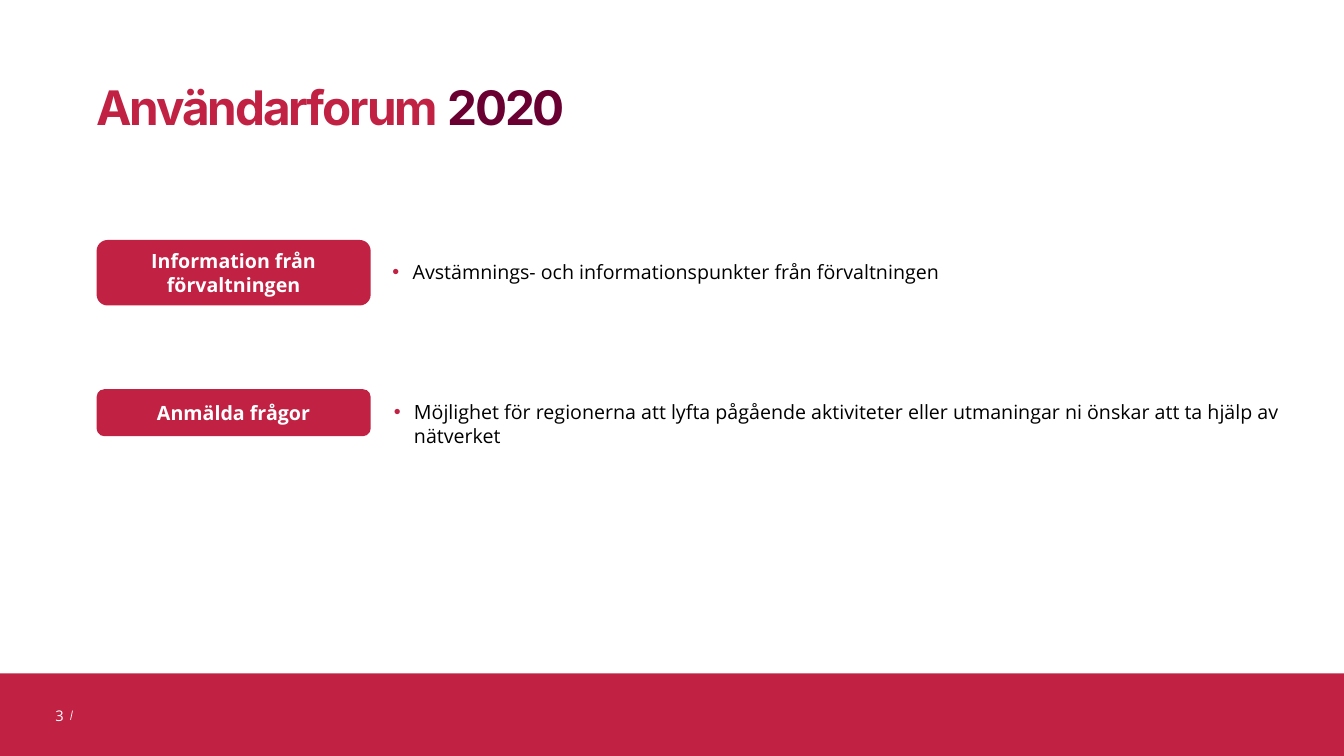
from dataclasses import dataclass

from lxml import etree
from pptx import Presentation
from pptx.dml.color import RGBColor
from pptx.enum.shapes import MSO_CONNECTOR, MSO_SHAPE
from pptx.enum.text import MSO_ANCHOR, MSO_AUTO_SIZE, PP_ALIGN
from pptx.oxml.ns import qn
from pptx.util import Pt

RECTANGLE = MSO_SHAPE.RECTANGLE
ROUNDED = MSO_SHAPE.ROUNDED_RECTANGLE
STRAIGHT = MSO_CONNECTOR.STRAIGHT
TOP, MIDDLE, BOTTOM = MSO_ANCHOR.TOP, MSO_ANCHOR.MIDDLE, MSO_ANCHOR.BOTTOM
LEFT, CENTER, RIGHT = PP_ALIGN.LEFT, PP_ALIGN.CENTER, PP_ALIGN.RIGHT
NO_AUTOFIT = MSO_AUTO_SIZE.NONE
TWO_CONTENT_LAYOUT = 3


@dataclass(frozen=True)
class Theme:
    red: str = "C12143"
    plum: str = "6A0032"
    white: str = "FFFFFF"
    black: str = "000000"
    heading_font: str = "Inter"
    body_font: str = "Open Sans"
    title_size: float = 34
    body_size: float = 14
    number_size: float = 10.5
    title_tracking: int = -150


class SlideBuilder:
    def __init__(self, slide, theme):
        self.slide = slide
        self.theme = theme

    def style(self, run, size, color, font=None, bold=False):
        run.font.name = font or self.theme.body_font
        run.font.size = Pt(size)
        run.font.bold = bold
        run.font.color.rgb = RGBColor.from_string(color)

    def place(self, shape, left, top, width, height):
        shape.left, shape.top = Pt(left), Pt(top)
        shape.width, shape.height = Pt(width), Pt(height)

    def frame(self, shape, anchor, inset=None):
        frame = shape.text_frame
        frame.word_wrap = True
        frame.auto_size = NO_AUTOFIT
        frame.vertical_anchor = anchor
        if inset is not None:
            frame.margin_left = frame.margin_right = Pt(inset)
            frame.margin_top = frame.margin_bottom = Pt(inset)
        return frame

    def title(self, parts, *box):
        heading = self.slide.shapes.title
        self.place(heading, *box)
        paragraph = self.frame(heading, BOTTOM, 0).paragraphs[0]
        paragraph.alignment = LEFT
        paragraph.line_spacing = 0.9
        for text, color in parts:
            run = paragraph.add_run()
            run.text = text
            self.style(run, self.theme.title_size, color, self.theme.heading_font, True)
            run.font._element.set("spc", str(self.theme.title_tracking))

    def block(self, preset, *box):
        shape = self.slide.shapes.add_shape(preset, *map(Pt, box))
        shape.shadow.inherit = False
        shape.fill.solid()
        shape.fill.fore_color.rgb = RGBColor.from_string(self.theme.red)
        shape.line.fill.background()
        return shape

    def topic(self, text, *box):
        frame = self.frame(self.block(ROUNDED, *box), MIDDLE)
        frame.text = text
        paragraph = frame.paragraphs[0]
        paragraph.alignment = CENTER
        self.style(paragraph.runs[0], self.theme.body_size, self.theme.white, bold=True)

    def bullet(self, index, text, inset, *box):
        body = self.slide.placeholders[index]
        self.place(body, *box)
        frame = self.frame(body, TOP, inset)
        frame.text = text
        paragraph = frame.paragraphs[0]
        properties = paragraph._p.get_or_add_pPr()
        properties.set("marL", str(Pt(22.5)))
        properties.set("indent", str(-Pt(14.4)))
        color = etree.SubElement(properties, qn("a:buClr"))
        etree.SubElement(color, qn("a:srgbClr"), val=self.theme.red)
        etree.SubElement(properties, qn("a:buFont"), typeface="Arial")
        etree.SubElement(properties, qn("a:buChar"), char="•")
        paragraph.space_before = Pt(0)
        self.style(paragraph.runs[0], self.theme.body_size, self.theme.black)

    def page_number(self, text, *box):
        number = self.slide.shapes.add_textbox(*map(Pt, box))
        frame = self.frame(number, MIDDLE)
        frame.text = text
        paragraph = frame.paragraphs[0]
        paragraph.alignment = RIGHT
        self.style(paragraph.runs[0], self.theme.number_size, self.theme.white)

    def rule(self, *ends):
        line = self.slide.shapes.add_connector(STRAIGHT, *map(Pt, ends))
        line.line.color.rgb = RGBColor.from_string(self.theme.white)
        line.line.width = Pt(0.5)
        etree.SubElement(line._element.spPr, qn("a:effectLst"))


def main():
    deck = Presentation()
    deck.slide_width, deck.slide_height = Pt(960), Pt(540)
    theme = Theme()
    slide = deck.slides.add_slide(deck.slide_layouts[TWO_CONTENT_LAYOUT])
    builder = SlideBuilder(slide, theme)

    builder.block(RECTANGLE, 0, 481, 960, 59)
    builder.rule(51.8, 507.6, 50.4, 514.1)
    builder.title([("Användarforum", theme.red), (" 2020", theme.plum)],
                  69, 6.5, 793.5, 90.7)
    builder.page_number("3", 21.6, 496.8, 31, 28.8)

    builder.topic("Information från förvaltningen", 69, 171.4, 195.8, 46.8)
    builder.bullet(1, "Avstämnings- och informationspunkter från förvaltningen",
                   3.6, 268.6, 182.2, 721.4, 24.5)

    builder.topic("Anmälda frågor", 69, 278, 195.8, 33.6)
    builder.bullet(2, "Möjlighet för regionerna att lyfta pågående aktiviteter eller "
                   "utmaningar ni önskar att ta hjälp av nätverket",
                   0, 273.2, 285.8, 676, 18)

    deck.save("out.pptx")


if __name__ == "__main__":
    main()
